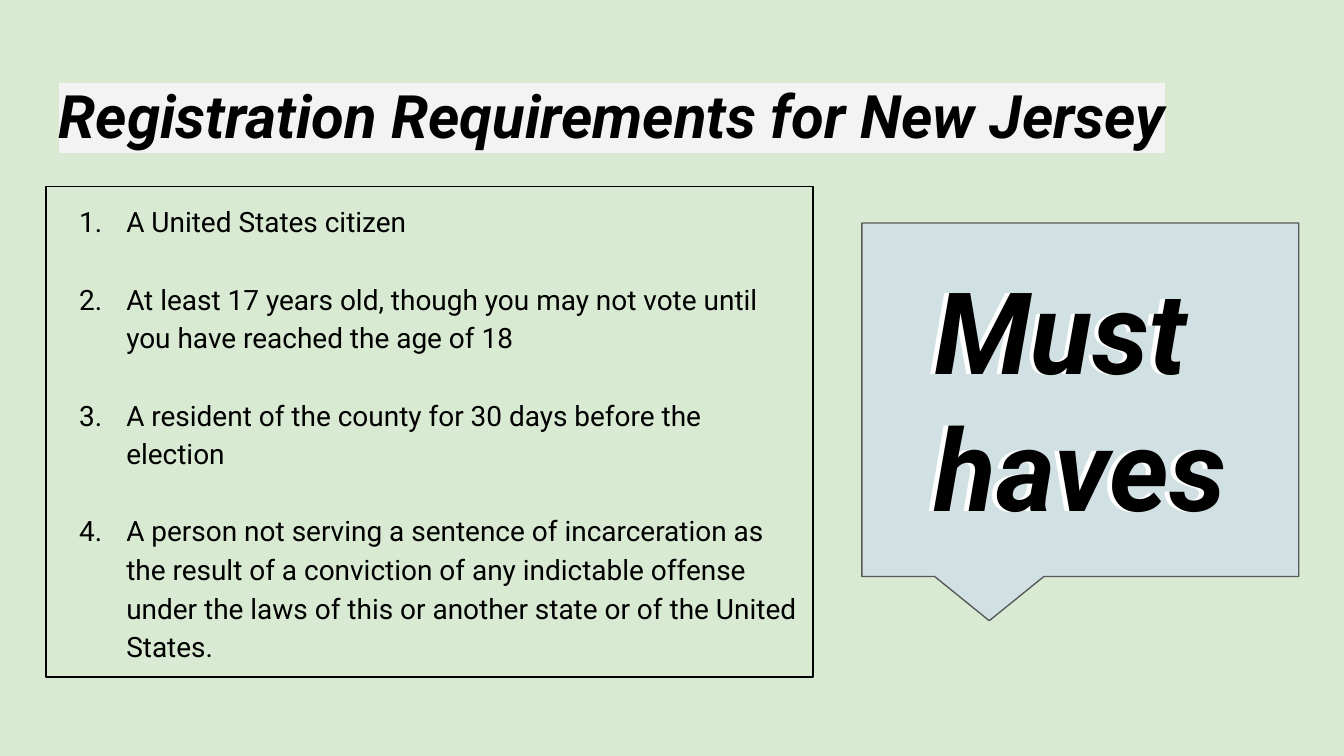
from lxml.etree import SubElement
from pptx import Presentation
from pptx.dml.color import RGBColor
from pptx.enum.shapes import MSO_SHAPE
from pptx.enum.text import MSO_ANCHOR, PP_ALIGN
from pptx.oxml.ns import qn
from pptx.util import Inches, Pt

SLIDE_WIDTH = Inches(10)
SLIDE_HEIGHT = SLIDE_WIDTH * 9 // 16
COLUMN = SLIDE_WIDTH / 100
ROW = SLIDE_HEIGHT / 100
INSET = Inches(0.1)
FONT = "Roboto"
BLACK = "000000"
REQUIREMENTS = [
    "A United States citizen",
    "At least 17 years old, though you may not vote until you have reached the age of 18",
    "A resident of the county for 30 days before the election",
    "A person not serving a sentence of incarceration as the result of a conviction "
    "of any indictable offense under the laws of this or another state or of the United States.",
]


def color(value):
    return RGBColor.from_string(value)


def place(box):
    left, top, width, height = box
    return round(left * COLUMN), round(top * ROW), round(width * COLUMN), round(height * ROW)


def prepare_text(shape):
    frame = shape.text_frame
    frame.word_wrap = True
    frame.vertical_anchor = MSO_ANCHOR.TOP
    frame.margin_left = frame.margin_right = INSET
    frame.margin_top = frame.margin_bottom = INSET
    return frame


def write_lines(frame, lines, size, fill, emphasis=False):
    for index, line in enumerate(lines):
        paragraph = frame.paragraphs[0] if index == 0 else frame.add_paragraph()
        paragraph.alignment = PP_ALIGN.LEFT
        run = paragraph.add_run()
        run.text = line
        run.font.name = FONT
        run.font.size = Pt(size)
        run.font.bold = run.font.italic = emphasis
        run.font.color.rgb = color(fill)
    return frame.paragraphs


def highlight(run, fill):
    properties = run.font._element
    marker = SubElement(properties, qn("a:highlight"))
    SubElement(marker, qn("a:srgbClr"), val=fill)
    properties.find(qn("a:solidFill")).addnext(marker)


def number(paragraph):
    properties = paragraph._p.get_or_add_pPr()
    properties.set("marL", str(Inches(0.5)))
    properties.set("indent", str(Inches(-0.35)))
    bullet_color = SubElement(properties, qn("a:buClr"))
    SubElement(bullet_color, qn("a:srgbClr"), val=BLACK)
    SubElement(properties, qn("a:buFont"), typeface=FONT)
    SubElement(properties, qn("a:buAutoNum"), type="arabicPeriod")


def add_outlined_shape(slide, kind, box, line):
    shape = slide.shapes.add_shape(kind, *place(box))
    shape.shadow.inherit = False
    shape.line.color.rgb = color(line)
    shape.line.width = Pt(0.75)
    return shape


def add_title(slide, box):
    frame = prepare_text(slide.shapes.add_textbox(*place(box)))
    title = write_lines(frame, ["Registration Requirements for New Jersey"], 32.1, BLACK, True)[0]
    highlight(title.runs[0], "F3F3F3")


def add_requirements(slide, box):
    shape = add_outlined_shape(slide, MSO_SHAPE.RECTANGLE, box, BLACK)
    shape.fill.background()
    paragraphs = write_lines(prepare_text(shape), REQUIREMENTS, 15, BLACK)
    for index, paragraph in enumerate(paragraphs):
        paragraph.line_spacing = 1.15
        paragraph.space_before = Pt(20.7 if index else 0)
        number(paragraph)


def add_callout(slide, box):
    left, top, width, height = box
    callout = add_outlined_shape(slide, MSO_SHAPE.ROUNDED_RECTANGULAR_CALLOUT, box, "595959")
    callout.fill.solid()
    callout.fill.fore_color.rgb = color("D0E0E3")
    for index, value in enumerate((-5 / 24, 5 / 8, 0)):
        callout.adjustments[index] = value
    for offset, fill in ((4.05, "FFFFFF"), (4.4, BLACK)):
        words_box = (left + offset, top + 0.07 * height, 0.86 * width, 0.86 * height)
        frame = prepare_text(slide.shapes.add_textbox(*place(words_box)))
        write_lines(frame, ["Must", "haves"], 61, fill, True)


def main():
    presentation = Presentation()
    presentation.slide_width = SLIDE_WIDTH
    presentation.slide_height = SLIDE_HEIGHT
    slide = presentation.slides.add_slide(presentation.slide_layouts[6])
    slide.background.fill.solid()
    slide.background.fill.fore_color.rgb = color("D9EAD3")
    add_title(slide, (3.4, 8.65, 93.2, 11.2))
    add_requirements(slide, (3.41, 24.67, 57.1, 64.89))
    add_callout(slide, (64.13, 29.5, 32.5, 46.76))
    presentation.save("out.pptx")


if __name__ == "__main__":
    main()
